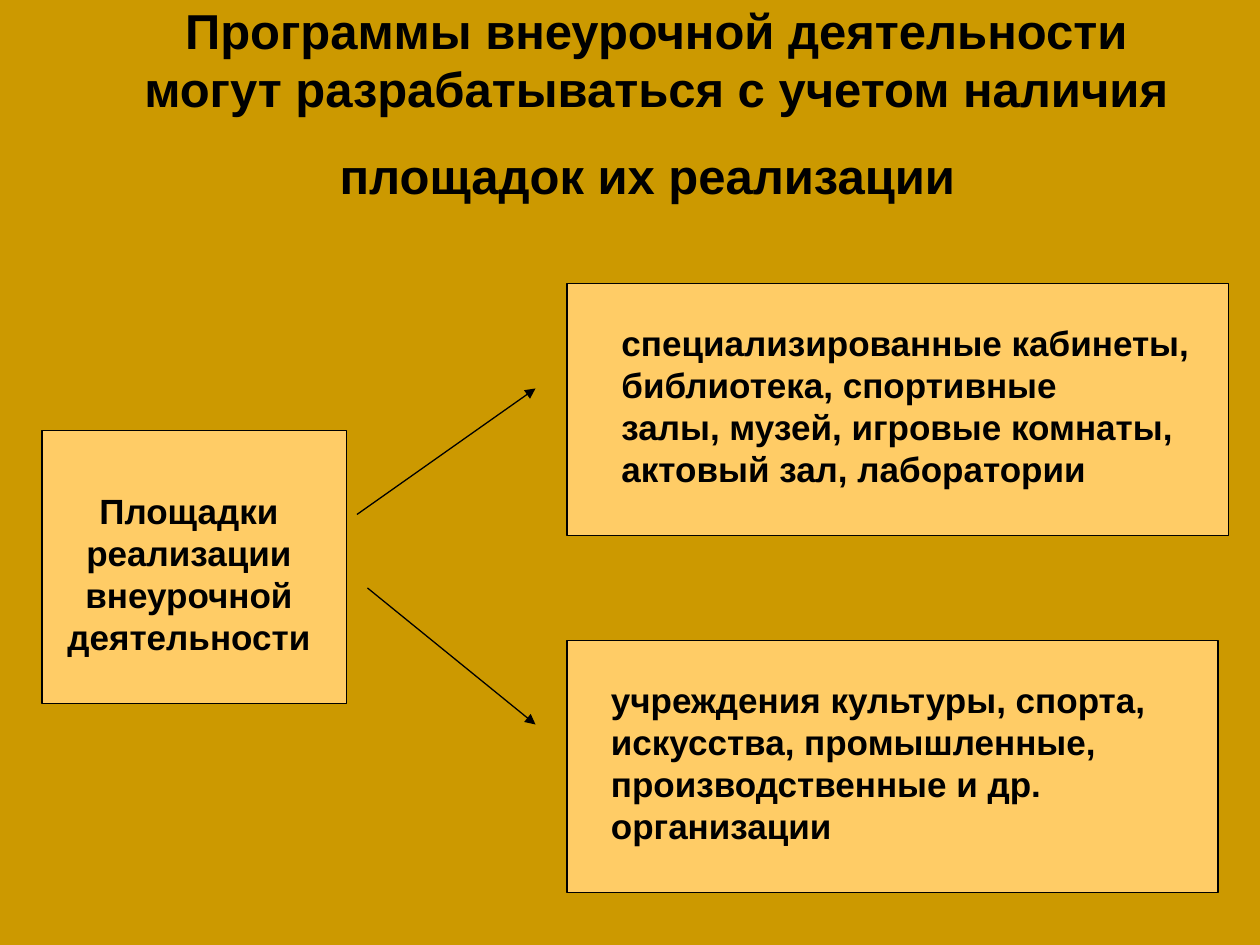
from pptx import Presentation
from pptx.dml.color import RGBColor
from pptx.enum.shapes import MSO_CONNECTOR as CONN, MSO_SHAPE as SHAPE
from pptx.enum.text import MSO_ANCHOR as ANCHOR, MSO_AUTO_SIZE as FIT, PP_ALIGN as ALIGN
from pptx.oxml.ns import qn
from pptx.util import Inches, Pt
from lxml.etree import SubElement


def rgb(color):
    return RGBColor.from_string(color)


class Deck:
    back, panel, ink, accent = "CC9900", "FFCC66", "000000", "FBBC09"
    face, title_size, text_size, line_width = "Arial", 28, 20, 0.75
    cols, rows = 120, 90

    def __init__(self):
        self.prs = Presentation()
        self.prs.slide_width, self.prs.slide_height = Inches(10), Inches(7.5)
        self.s = self.prs.slides.add_slide(self.prs.slide_layouts[5])
        fill = self.s.background.fill
        fill.solid()
        fill.fore_color.rgb = rgb(self.back)

    def grid(self, x, y):
        return (round(self.prs.slide_width * x / self.cols),
                round(self.prs.slide_height * y / self.rows))

    def font(self, font, size, color=ink, face=face, bold=True):
        font.name, font.size, font.bold = face, Pt(size), bold
        font.color.rgb = rgb(color)

    def outline(self, line):
        line.color.rgb = rgb(self.ink)
        line.width = Pt(self.line_width)

    def title(self, x, y, w, h, text):
        sp = self.s.shapes.title
        sp.left, sp.top = self.grid(x, y)
        sp.width, sp.height = self.grid(w, h)
        tf = sp.text_frame
        tf.auto_size, tf.vertical_anchor = FIT.NONE, ANCHOR.MIDDLE
        p = tf.paragraphs[0]
        p.text, p.alignment = text, ALIGN.CENTER
        self.font(p.font, self.title_size)
        r = p.add_run()
        r.text = " "
        self.font(r.font, 44, self.accent, "Arial Narrow", False)

    def box(self, x, y, w, h):
        sp = self.s.shapes.add_shape(SHAPE.RECTANGLE, *self.grid(x, y), *self.grid(w, h))
        sp.shadow.inherit = False
        sp.fill.solid()
        sp.fill.fore_color.rgb = rgb(self.panel)
        self.outline(sp.line)

    def text(self, x, y, w, h, lines, align=ALIGN.LEFT):
        tf = self.s.shapes.add_textbox(*self.grid(x, y), *self.grid(w, h)).text_frame
        tf.word_wrap, tf.auto_size = True, FIT.SHAPE_TO_FIT_TEXT
        for i, line in enumerate(lines):
            p = tf.add_paragraph() if i else tf.paragraphs[0]
            p.text, p.alignment = line, align
            self.font(p.font, self.text_size)

    def arrow(self, start, end):
        c = self.s.shapes.add_connector(CONN.STRAIGHT, *self.grid(*start), *self.grid(*end))
        self.outline(c.line)
        SubElement(c.line._get_or_add_ln(), qn("a:tailEnd"), type="triangle")
        SubElement(c._element.spPr, qn("a:effectLst"))


def main():
    deck = Deck()
    deck.title(10, 4, 105, 12, "Программы внеурочной деятельности могут разрабатываться "
                               "с учетом наличия\vплощадок их реализации")
    deck.box(4, 41, 29, 26)
    deck.text(4, 46, 28, 17, ["Площадки реализации внеурочной деятельности"], ALIGN.CENTER)
    deck.box(54, 27, 63, 24)
    deck.box(54, 61, 62, 24)
    deck.text(58, 30, 57, 17, ["специализированные кабинеты,", "библиотека, спортивные",
                               "залы, музей, игровые комнаты,", "актовый зал, лаборатории"])
    deck.text(57, 64, 57, 17, ["учреждения культуры, спорта,", "искусства, промышленные,",
                               "производственные и др. организации"])
    deck.arrow((34, 49), (51, 37))
    deck.arrow((35, 56), (51, 69))
    deck.prs.save("out.pptx")


if __name__ == "__main__":
    main()
